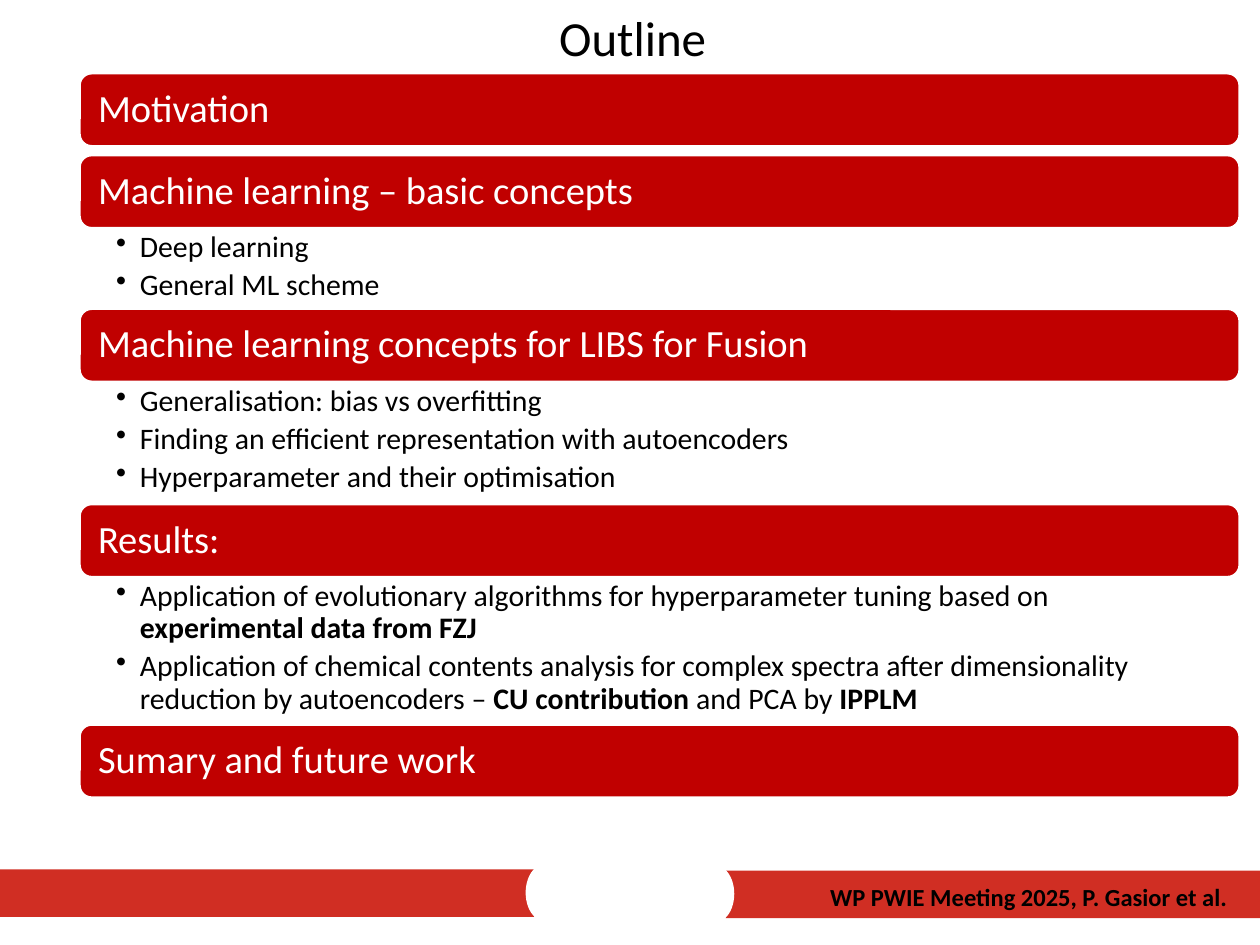
from dataclasses import dataclass

from lxml import etree
from pptx import Presentation
from pptx import util as u
from pptx.dml.color import RGBColor
from pptx.enum import shapes, text
from pptx.oxml import ns


@dataclass(frozen=True)
class Theme:
    font: str = "Calibri"
    ink: str = "000000"
    paper: str = "FFFFFF"
    heading_fill: str = "C00000"
    footer_fill: str = "D02E23"
    title_size: float = 28
    heading_size: float = 22
    point_size: float = 17
    footer_size: float = 14


@dataclass(frozen=True)
class Box:
    left: float
    top: float
    width: float
    height: float

    def lengths(self) -> list[u.Length]:
        return [u.Pt(n) for n in (self.left, self.top, self.width, self.height)]


@dataclass(frozen=True)
class Words:
    content: str
    bold: bool = False


@dataclass(frozen=True)
class Section:
    heading: str
    space_below: float = 0
    points: tuple[tuple[Words, ...], ...] = ()


THEME = Theme()
SECTION_LEFT, SECTION_TOP, SECTION_WIDTH, HEADING_HEIGHT = 45.4, 41.8, 663, 41.8
POINT_INDENT = 13.5

SECTIONS = (
    Section("Motivation", 5),
    Section("Machine learning – basic concepts", 46, (
        (Words("Deep learning"),),
        (Words("General ML scheme"),),
    )),
    Section("Machine learning concepts for LIBS for Fusion", 69.8, (
        (Words("Generalisation: bias vs overfitting"),),
        (Words("Finding an efficient representation with autoencoders"),),
        (Words("Hyperparameter and their optimisation"),),
    )),
    Section("Results:", 84.2, (
        (Words("Application of evolutionary algorithms for hyperparameter tuning based on "),
         Words("experimental data from FZJ", True)),
        (Words("Application of chemical contents analysis for complex spectra after "
               "dimensionality reduction by autoencoders – "),
         Words("CU contribution", True),
         Words(" and PCA by "),
         Words("IPPLM", True)),
    )),
    Section("Sumary and future work"),
)


def add_words(paragraph, words: Words, size: float, color: str) -> None:
    run = paragraph.add_run()
    run.text = words.content
    run.font.name = THEME.font
    run.font.size = u.Pt(size)
    run.font.bold = words.bold
    run.font.color.rgb = RGBColor.from_string(color)


def set_margins(frame, left: float, top: float, right: float, bottom: float) -> None:
    frame.margin_left, frame.margin_top = u.Pt(left), u.Pt(top)
    frame.margin_right, frame.margin_bottom = u.Pt(right), u.Pt(bottom)


def add_filled(slide, kind: shapes.MSO_SHAPE, box: Box, fill: str):
    shape = slide.shapes.add_shape(kind, *box.lengths())
    shape.shadow.inherit = False
    shape.fill.solid()
    shape.fill.fore_color.rgb = RGBColor.from_string(fill)
    shape.line.fill.background()
    return shape


def add_text_frame(slide, box: Box):
    frame = slide.shapes.add_textbox(*box.lengths()).text_frame
    frame.word_wrap = True
    return frame


def add_footer_band(slide, band: Box, notch: Box) -> None:
    add_filled(slide, shapes.MSO_SHAPE.RECTANGLE, band, THEME.footer_fill)
    add_filled(slide, shapes.MSO_SHAPE.OVAL, notch, THEME.paper)


def add_title(slide, title: str) -> None:
    frame = add_text_frame(slide, Box(121, 7.2, 481, 31.7))
    frame.vertical_anchor = text.MSO_ANCHOR.MIDDLE
    paragraph = frame.paragraphs[0]
    paragraph.alignment = text.PP_ALIGN.CENTER
    paragraph.line_spacing = 0.9
    add_words(paragraph, Words(title), THEME.title_size, THEME.ink)


def add_heading(slide, heading: str, top: float) -> None:
    bar = add_filled(slide, shapes.MSO_SHAPE.ROUNDED_RECTANGLE,
                     Box(SECTION_LEFT, top, SECTION_WIDTH, HEADING_HEIGHT),
                     THEME.heading_fill)
    bar.line.color.rgb = RGBColor.from_string(THEME.paper)
    bar.line.width = u.Pt(1.5)
    frame = bar.text_frame
    frame.word_wrap = True
    frame.vertical_anchor = text.MSO_ANCHOR.MIDDLE
    set_margins(frame, 8.6, 6.5, 8.6, 6.5)
    paragraph = frame.paragraphs[0]
    paragraph.alignment = text.PP_ALIGN.LEFT
    paragraph.line_spacing = 0.9
    add_words(paragraph, Words(heading), THEME.heading_size, THEME.paper)


def add_bullet(paragraph) -> None:
    properties = paragraph._p.get_or_add_pPr()
    properties.set("marL", str(u.Pt(POINT_INDENT)))
    properties.set("indent", str(-u.Pt(POINT_INDENT)))
    etree.SubElement(properties, ns.qn("a:buChar"), char="•")


def add_points(slide, section: Section, top: float) -> None:
    frame = add_text_frame(
        slide, Box(SECTION_LEFT, top, SECTION_WIDTH, section.space_below))
    set_margins(frame, 21, 2.2, 12.2, 2.2)
    for index, point in enumerate(section.points):
        paragraph = frame.add_paragraph() if index else frame.paragraphs[0]
        add_bullet(paragraph)
        paragraph.level = 1
        paragraph.line_spacing = 0.9
        paragraph.space_after = u.Pt(THEME.point_size * 0.2)
        for words in point:
            add_words(paragraph, words, THEME.point_size, THEME.ink)


def add_footer_text(slide, footer: str) -> None:
    paragraph = add_text_frame(slide, Box(432.7, 500.4, 275.8, 24.2)).paragraphs[0]
    paragraph.alignment = text.PP_ALIGN.RIGHT
    add_words(paragraph, Words(footer, True), THEME.footer_size, THEME.ink)


def main() -> None:
    deck = Presentation()
    deck.slide_width, deck.slide_height = u.Pt(720), u.Pt(540)
    slide = deck.slides.add_slide(deck.slide_layouts[6])

    add_footer_band(slide, Box(414.7, 497.5, 305.3, 27.2), Box(398, 494.6, 21.6, 32.4))
    add_footer_band(slide, Box(0, 496.8, 305.3, 27.2), Box(300.4, 493.9, 21.6, 32.4))
    add_title(slide, "Outline")

    top = SECTION_TOP
    for section in SECTIONS:
        add_heading(slide, section.heading, top)
        top += HEADING_HEIGHT
        if section.points:
            add_points(slide, section, top)
        top += section.space_below

    add_footer_text(slide, "WP PWIE Meeting 2025, P. Gasior et al.")
    deck.save("out.pptx")


if __name__ == "__main__":
    main()
